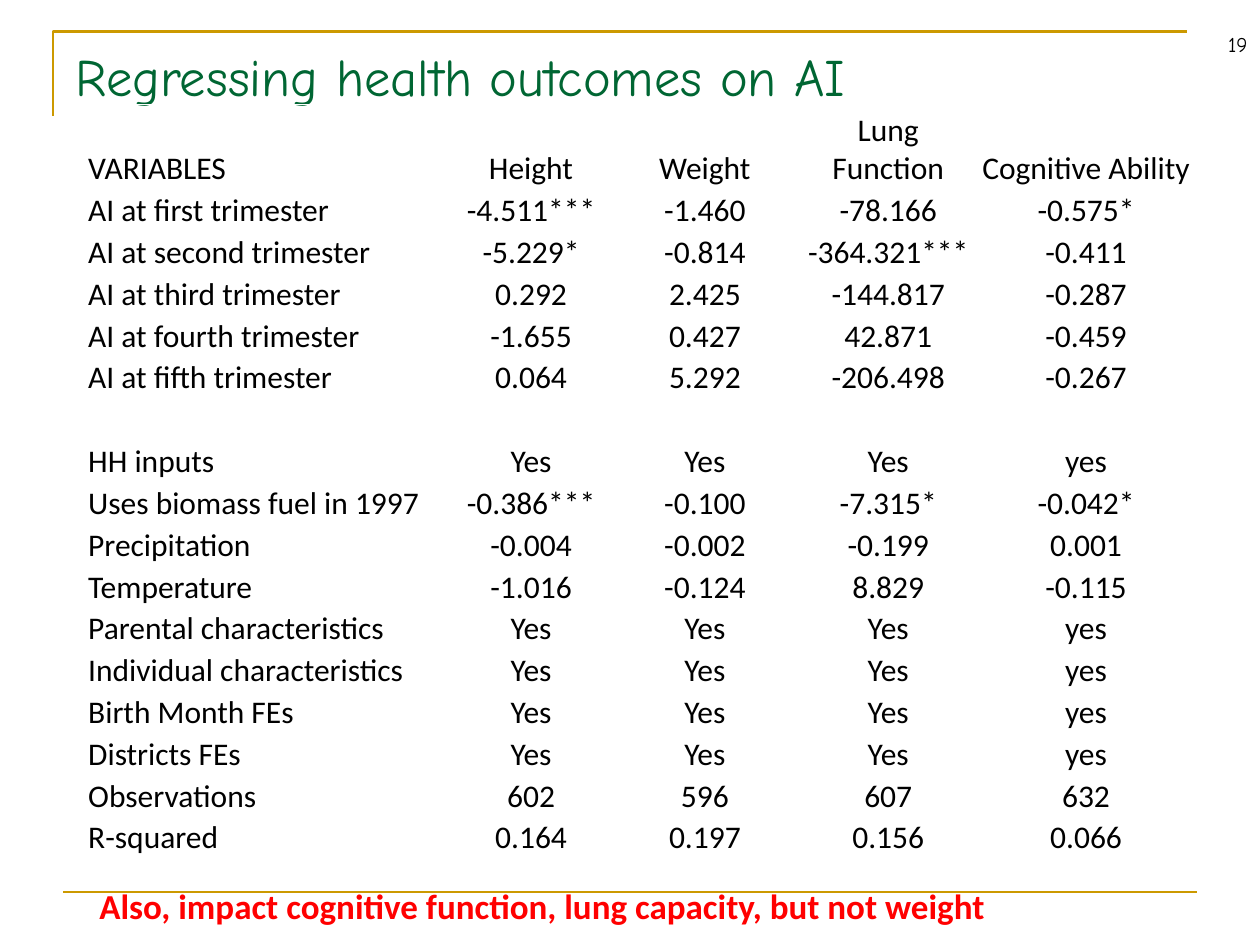
from pptx import Presentation
from pptx.dml.color import RGBColor
from pptx.enum import shapes, text
from pptx.oxml import ns
from pptx.util import Inches, Pt
from lxml import etree

TITLE = "Regressing health outcomes on AI"
PAGE_NUMBER = "19"
TAKEAWAY = "Also, impact cognitive function, lung capacity, but not weight"
GOLD, GREEN, RED, BLACK = "CC9900", "006633", "FF0000", "000000"
HEADING_FONT, BODY_FONT = "Comic Neue", "Calibri"
YES = ("Yes", "Yes", "Yes", "yes")
RESULTS = [
    ("VARIABLES", "Height", "Weight", "Lung Function", "Cognitive Ability"),
    ("AI at first trimester", "-4.511***", "-1.460", "-78.166", "-0.575*"),
    ("AI at second trimester", "-5.229*", "-0.814", "-364.321***", "-0.411"),
    ("AI at third trimester", "0.292", "2.425", "-144.817", "-0.287"),
    ("AI at fourth trimester", "-1.655", "0.427", "42.871", "-0.459"),
    ("AI at fifth trimester", "0.064", "5.292", "-206.498", "-0.267"),
    ("", "", "", "", ""),
    ("HH inputs", *YES),
    ("Uses biomass fuel in 1997", "-0.386***", "-0.100", "-7.315*", "-0.042*"),
    ("Precipitation", "-0.004", "-0.002", "-0.199", "0.001"),
    ("Temperature", "-1.016", "-0.124", "8.829", "-0.115"),
    ("Parental characteristics", *YES),
    ("Individual characteristics", *YES),
    ("Birth Month FEs", *YES),
    ("Districts FEs", *YES),
    ("Observations", "602", "596", "607", "632"),
    ("R-squared", "0.164", "0.197", "0.156", "0.066"),
]
COLUMN_WIDTHS = [2.94, 1.21, 1.55, 1.36, 1.78]
TABLE_LEFT, TABLE_TOP, TABLE_HEIGHT = 0.67, 0.83, 5.98
HEADER_LINES = 2


def color(value):
    return RGBColor.from_string(value)


def style_line(shape):
    shape.line.color.rgb = color(GOLD)
    shape.line.width = Pt(1.5)


def write(para, words, size, font, ink, align=text.PP_ALIGN.LEFT, bold=False):
    para.alignment = align
    if not words:
        para.font.size = Pt(size)
        return
    span = para.add_run()
    span.text = words
    span.font.size = Pt(size)
    span.font.name = font
    span.font.bold = bold
    span.font.color.rgb = color(ink)


def add_text(page, place, anchor, *words, **style):
    box = page.shapes.add_textbox(*map(Inches, place))
    frame = box.text_frame
    frame.word_wrap = True
    frame.vertical_anchor = anchor
    write(frame.paragraphs[0], *words, **style)


def add_rules(page):
    builder = page.shapes.build_freeform(Inches(0.42), Inches(0.92))
    corner = [(Inches(0.42), Inches(0.25)), (Inches(9.42), Inches(0.25))]
    builder.add_line_segments(corner, close=False)
    frame = builder.convert_to_shape()
    frame.shadow.inherit = False
    frame.fill.background()
    style_line(frame)
    ends = map(Inches, (0.5, 7.08, 9.5, 7.08))
    rule = page.shapes.add_connector(shapes.MSO_CONNECTOR.STRAIGHT, *ends)
    style_line(rule)
    etree.SubElement(rule._element.spPr, ns.qn("a:effectLst"))


def add_results(page):
    place = (TABLE_LEFT, TABLE_TOP, sum(COLUMN_WIDTHS), TABLE_HEIGHT)
    table = page.shapes.add_table(
        len(RESULTS), len(COLUMN_WIDTHS), *map(Inches, place)).table
    table.first_row = table.horz_banding = False
    for column, width in zip(table.columns, COLUMN_WIDTHS):
        column.width = Inches(width)
    line_height = TABLE_HEIGHT / (len(RESULTS) - 1 + HEADER_LINES)
    for i, values in enumerate(RESULTS):
        table.rows[i].height = Inches(line_height * (1 if i else HEADER_LINES))
        for j, value in enumerate(values):
            cell = table.cell(i, j)
            cell.fill.background()
            cell.vertical_anchor = text.MSO_ANCHOR.BOTTOM
            cell.margin_left = cell.margin_right = Inches(0.03)
            cell.margin_top = cell.margin_bottom = 0
            align = text.PP_ALIGN.CENTER if j else text.PP_ALIGN.LEFT
            write(cell.text_frame.paragraphs[0], value, 18, BODY_FONT, BLACK, align)


def main():
    deck = Presentation()
    deck.slide_width, deck.slide_height = Inches(10), Inches(7.5)
    page = deck.slides.add_slide(deck.slide_layouts[6])
    add_rules(page)
    add_text(page, (0.5, 0.3, 9, 0.61), text.MSO_ANCHOR.TOP,
             TITLE, 30, HEADING_FONT, GREEN)
    add_text(page, (9.42, 0, 0.58, 0.5), text.MSO_ANCHOR.BOTTOM,
             PAGE_NUMBER, 12, HEADING_FONT, BLACK, align=text.PP_ALIGN.RIGHT)
    add_text(page, (0.69, 6.97, 8.5, 0.44), text.MSO_ANCHOR.TOP,
             TAKEAWAY, 20, BODY_FONT, RED, bold=True)
    add_results(page)
    deck.save("out.pptx")


if __name__ == "__main__":
    main()
